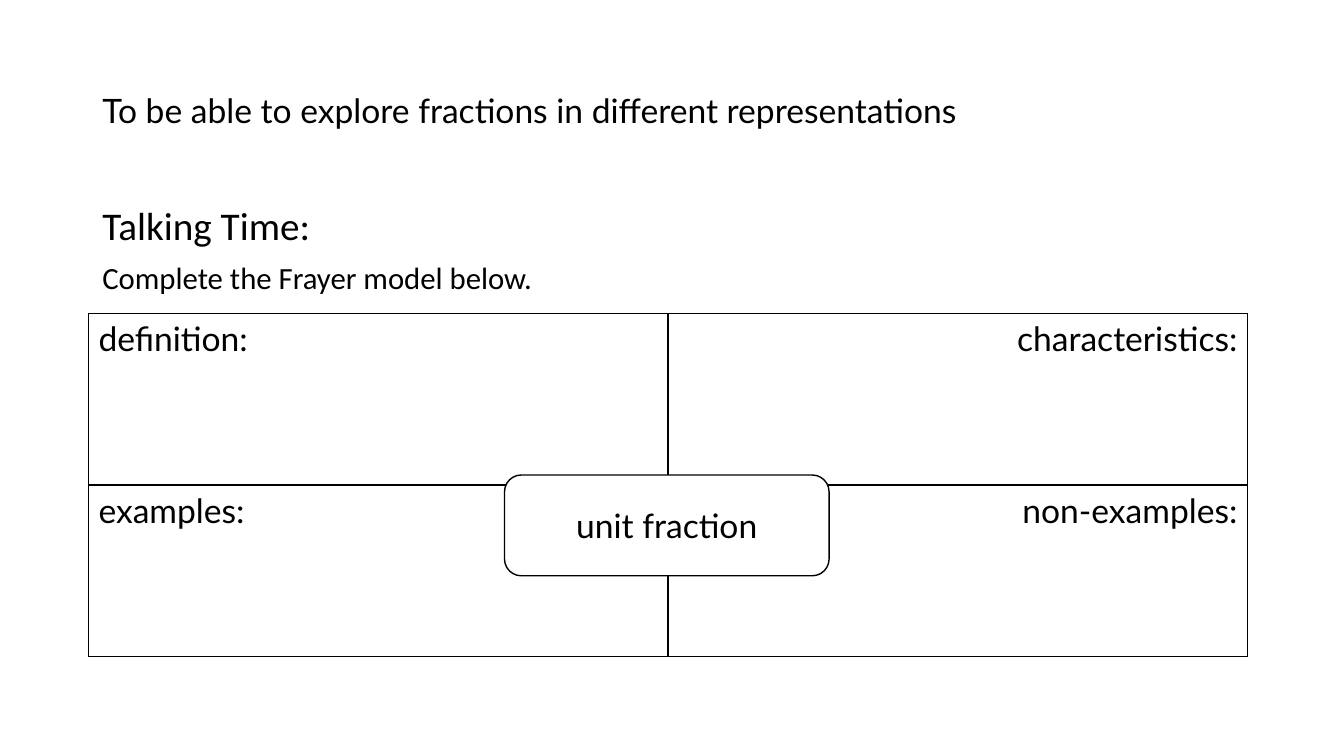
from lxml.etree import SubElement
from pptx import Presentation
from pptx.dml.color import RGBColor
from pptx.enum.shapes import MSO_SHAPE as Shape
from pptx.enum.text import MSO_ANCHOR as Anchor, PP_ALIGN as Align
from pptx.oxml.ns import qn
from pptx.util import Cm, Pt

BLACK, WHITE = "000000", "FFFFFF"
LABEL = {"name": "Lato", "size": Pt(24)}
HEADING = {"name": "Calibri", "size": Pt(28)}
INSTRUCTION = {"name": "Calibri", "size": Pt(22)}
BODY_SPACING = {"line_spacing": 0.9}
QUADRANTS = [["definition:", "characteristics:"],
             ["examples:", "non-examples:"]]


def color(value):
    return RGBColor.from_string(value)


def fill_white(target):
    target.fill.solid()
    target.fill.fore_color.rgb = color(WHITE)


def write(p, text, font, **layout):
    """Put one formatted run into a paragraph."""
    r = p.add_run()
    r.text = text
    for name, value in font.items():
        setattr(r.font, name, value)
    r.font.color.rgb = color(BLACK)
    for name, value in layout.items():
        setattr(p, name, value)


def add_text_frame(s, box, anchor):
    tf = s.shapes.add_textbox(*box).text_frame
    tf.word_wrap = True
    tf.vertical_anchor = anchor
    return tf


def add_objective(s, box):
    tf = add_text_frame(s, box, Anchor.MIDDLE)
    write(tf.paragraphs[0],
          "To be able to explore fractions in different representations",
          LABEL, **BODY_SPACING)


def add_task(s, box):
    tf = add_text_frame(s, box, Anchor.TOP)
    write(tf.paragraphs[0], "Talking Time:", HEADING, **BODY_SPACING)
    write(tf.add_paragraph(), "Complete the Frayer model below.",
          INSTRUCTION, space_before=Pt(10), **BODY_SPACING)


def add_borders(cell):
    tc_pr = cell._tc.get_or_add_tcPr()
    for side in ("lnL", "lnR", "lnT", "lnB"):
        ln = SubElement(tc_pr, qn(f"a:{side}"), w=str(Pt(1)))
        fill = SubElement(ln, qn("a:solidFill"))
        SubElement(fill, qn("a:srgbClr"), val=BLACK)


def add_frayer_model(s, box, term):
    """Draw the four quadrants with the term over their centre."""
    left, top, width, height = box
    table = s.shapes.add_table(2, 2, left, top, width, height).table
    table.first_row = table.horz_banding = False
    for row, labels in enumerate(QUADRANTS):
        for col, (label, align) in enumerate(zip(labels, (Align.LEFT, Align.RIGHT))):
            cell = table.cell(row, col)
            add_borders(cell)
            fill_white(cell)
            write(cell.text_frame.paragraphs[0], label, LABEL, alignment=align)

    term_width, term_height = Cm(8.18), Cm(2.54)
    sp = s.shapes.add_shape(Shape.ROUNDED_RECTANGLE,
                            left + (width - term_width) // 2 - Cm(0.03),
                            top + height // 2 - Cm(0.25),
                            term_width, term_height)
    sp.shadow.inherit = False
    fill_white(sp)
    sp.line.color.rgb = color(BLACK)
    sp.line.width = Pt(1)
    sp.text_frame.vertical_anchor = Anchor.MIDDLE
    write(sp.text_frame.paragraphs[0], term, LABEL, alignment=Align.CENTER)


def main():
    prs = Presentation()
    prs.slide_width, prs.slide_height = Cm(33.87), Cm(19.05)
    s = prs.slides.add_slide(prs.slide_layouts[6])
    add_objective(s, (Cm(2.33), Cm(1.01), Cm(24.38), Cm(3.68)))
    add_task(s, (Cm(2.33), Cm(5.07), Cm(29.21), Cm(12.09)))
    add_frayer_model(s, (Cm(2.23), Cm(7.9), Cm(29.21), Cm(8.64)), "unit fraction")
    prs.save("out.pptx")


if __name__ == "__main__":
    main()
